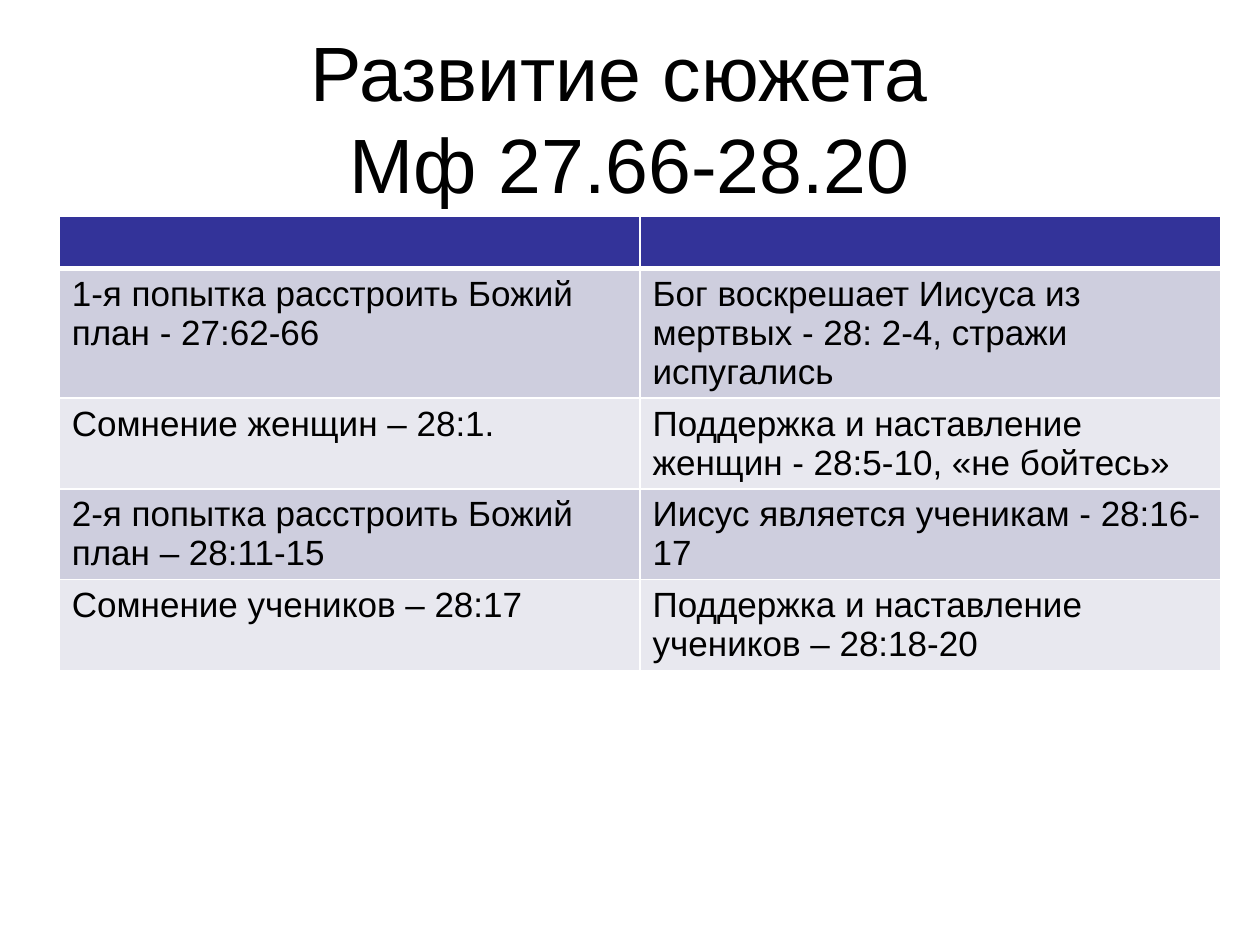
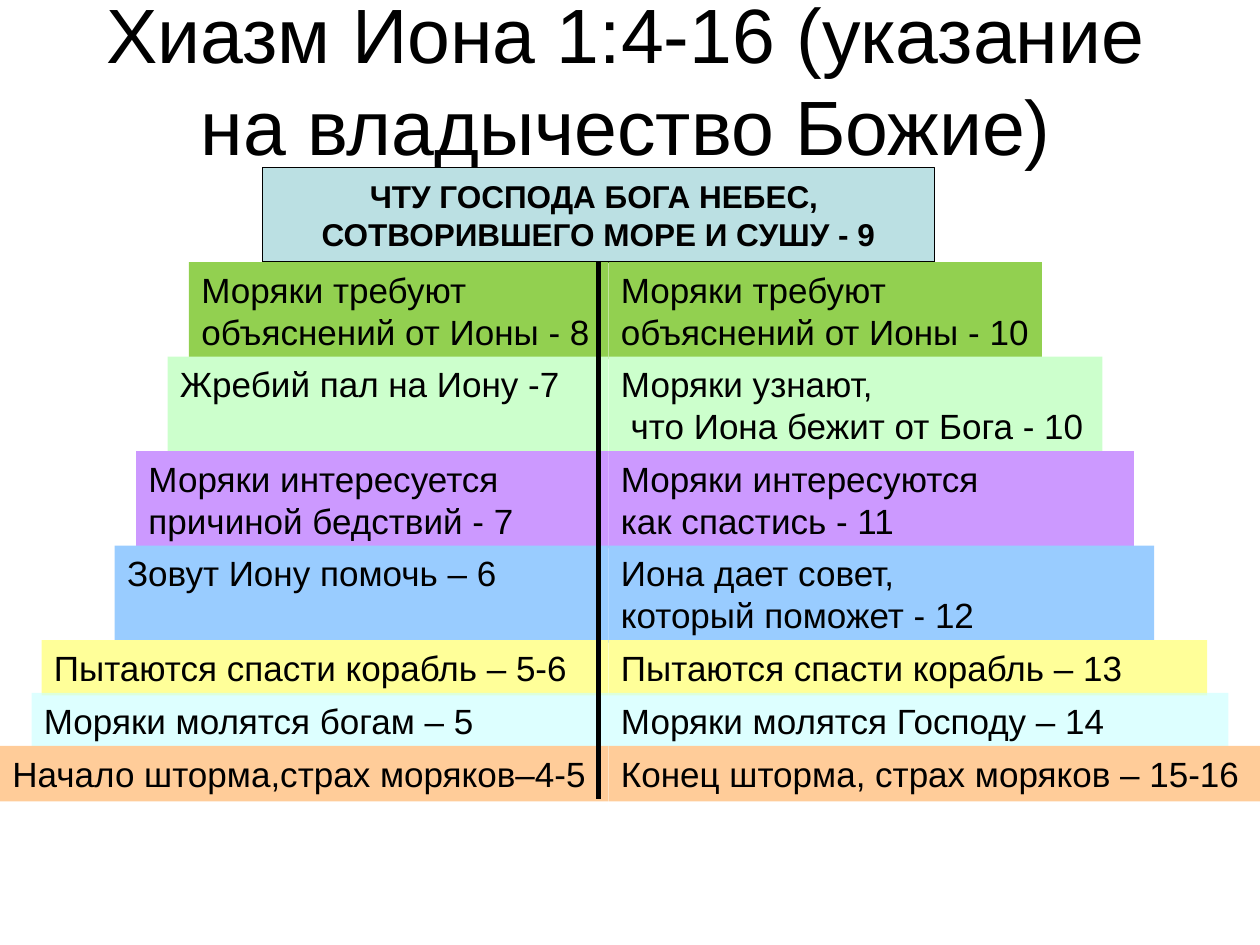
import pptx
import pptx.util
import pptx.dml.color
import pptx.enum.shapes
import pptx.enum.text
import pptx.oxml
import pptx.oxml.ns
from dataclasses import dataclass

Inches = pptx.util.Inches
Pt = pptx.util.Pt
ALIGN = pptx.enum.text.PP_ALIGN
ANCHOR = pptx.enum.text.MSO_ANCHOR


@dataclass(frozen=True)
class Theme:
    font: str = "Arial"
    ink: str = "000000"
    white: str = "FFFFFF"
    header: str = "333399"
    stripes: tuple = ("CECEDE", "E8E8EF")
    banner: str = "BBE0E3"
    title_size: int = 44
    body_size: int = 20
    banner_size: int = 18


THEME = Theme()

# Left and right cell text with the row height
PLOT_ROWS = [
    ("", "", 0.41),
    ("1-я попытка расстроить Божий план - 27:62-66",
     "Бог воскрешает Иисуса из мертвых - 28: 2-4, стражи испугались", 1.03),
    ("Сомнение женщин – 28:1.",
     "Поддержка и наставление женщин - 28:5-10, «не бойтесь»", 0.72),
    ("2-я попытка расстроить Божий план – 28:11-15",
     "Иисус является ученикам - 28:16-17", 0.72),
    ("Сомнение учеников – 28:17",
     "Поддержка и наставление учеников – 28:18-20", 0.72),
]

# Colour, opacity in percent, left width, right width, lines, left text, right text
CHIASM_STEPS = [
    ("92D050", 100, 3.33, 3.44, 2, "Моряки требуют\nобъяснений от Ионы - 8",
     "Моряки требуют\nобъяснений от Ионы - 10"),
    ("CCFFCC", 100, 3.5, 3.92, 2, "Жребий пал на Иону -7",
     "Моряки узнают,\n что Иона бежит от Бога - 10"),
    ("CC99FF", 100, 3.75, 4.17, 2, "Моряки интересуется\nпричиной бедствий - 7",
     "Моряки интересуются\nкак спастись - 11"),
    ("99CCFF", 100, 3.92, 4.33, 2, "Зовут Иону помочь – 6",
     "Иона дает совет,\nкоторый поможет - 12"),
    ("FFFF99", 100, 4.5, 4.75, 1, "Пытаются спасти корабль – 5-6",
     "Пытаются спасти корабль – 13"),
    ("CCFFFF", 66, 4.58, 4.92, 1, "Моряки молятся богам – 5",
     "Моряки молятся Господу – 14"),
    ("FFCC99", 100, 4.83, 5.25, 1, "Начало шторма,страх моряков–4-5",
     "Конец шторма, страх моряков – 15-16"),
]
STEP_PITCH = {1: 0.42, 2: 0.75}
STEP_OVERLAP = 0.02


def rgb(code):
    return pptx.dml.color.RGBColor.from_string(code)


def write_text(frame, text, size, align=ALIGN.LEFT, bold=False):
    frame.text = text
    for para in frame.paragraphs:
        para.alignment = align
        para.font.name = THEME.font
        para.font.size = Pt(size)
        para.font.bold = bold
        para.font.color.rgb = rgb(THEME.ink)


def add_titled_page(deck, title, left, top):
    page = deck.slides.add_slide(deck.slide_layouts[5])
    box = page.shapes.title
    box.left, box.top = Inches(left), Inches(top)
    box.width, box.height = Inches(9), Inches(1.25)
    frame = box.text_frame
    write_text(frame, title, THEME.title_size, ALIGN.CENTER)
    frame.auto_size = pptx.enum.text.MSO_AUTO_SIZE.NONE
    frame.vertical_anchor = ANCHOR.MIDDLE
    return page


def add_rectangle(page, left, top, width, height, color, text, size,
                  align=ALIGN.LEFT, anchor=ANCHOR.TOP, bold=False):
    box = page.shapes.add_shape(pptx.enum.shapes.MSO_SHAPE.RECTANGLE, Inches(left),
                                Inches(top), Inches(width), Inches(height))
    box.shadow.inherit = False
    box.fill.solid()
    box.fill.fore_color.rgb = rgb(color)
    box.line.fill.background()
    box.text_frame.vertical_anchor = anchor
    write_text(box.text_frame, text, size, align, bold)
    return box


def set_opacity(box, percent):
    color = box.fill._xPr.find(".//" + pptx.oxml.ns.qn("a:srgbClr"))
    alpha = pptx.oxml.parse_xml(
        f'<a:alpha {pptx.oxml.ns.nsdecls("a")} val="{percent * 1000}"/>')
    color.append(alpha)


def set_borders(cell, top, bottom):
    """Draw white cell borders; top and bottom are widths in points."""
    for side, width in (("L", 1), ("R", 1), ("T", top), ("B", bottom)):
        cell._tc.get_or_add_tcPr().append(pptx.oxml.parse_xml(
            f'<a:ln{side} {pptx.oxml.ns.nsdecls("a")} w="{Pt(width)}"><a:solidFill>'
            f'<a:srgbClr val="{THEME.white}"/></a:solidFill></a:ln{side}>'))


def add_plot_table(page, left, top, width):
    height = sum(row[-1] for row in PLOT_ROWS)
    table = page.shapes.add_table(len(PLOT_ROWS), 2, Inches(left), Inches(top),
                                  Inches(width), Inches(height)).table
    for index, (threat, answer, row_height) in enumerate(PLOT_ROWS):
        table.rows[index].height = Inches(row_height)
        color = THEME.stripes[(index - 1) % 2] if index else THEME.header
        for cell, text in zip(table.rows[index].cells, (threat, answer)):
            set_borders(cell, top=3 if index == 1 else 1, bottom=1 if index else 3)
            cell.fill.solid()
            cell.fill.fore_color.rgb = rgb(color)
            write_text(cell.text_frame, text, THEME.body_size)


def add_chiasm(page, axis, top):
    """Stack mirrored steps on both sides of the axis, under a banner."""
    # Banner at the summit
    banner_width, banner_height = 5.33, 0.75
    banner_left = axis - 0.08 - banner_width / 2
    banner = add_rectangle(
        page, banner_left, top, banner_width, banner_height, THEME.banner,
        "ЧТУ ГОСПОДА БОГА НЕБЕС, \nСОТВОРИВШЕГО МОРЕ И СУШУ - 9",
        THEME.banner_size, ALIGN.CENTER, ANCHOR.MIDDLE, bold=True)
    banner.line.color.rgb = rgb(THEME.ink)
    banner.line.width = Pt(0.75)

    # Paired steps
    step_top = top + banner_height
    for color, opacity, left_width, right_width, lines, left_text, right_text in CHIASM_STEPS:
        height = STEP_PITCH[lines] + STEP_OVERLAP
        for left, width, text in ((axis - left_width, left_width, left_text),
                                  (axis, right_width, right_text)):
            box = add_rectangle(page, left, step_top, width, height, color, text,
                                THEME.body_size)
            if opacity < 100:
                set_opacity(box, opacity)
        step_top += STEP_PITCH[lines]

    # Dividing line from the banner to the base
    middle = banner.left + banner.width // 2
    divider = page.shapes.add_connector(
        pptx.enum.shapes.MSO_CONNECTOR.STRAIGHT, middle, banner.top + banner.height,
        middle, Inches(step_top))
    divider.begin_connect(banner, 2)
    divider.line.color.rgb = rgb(THEME.ink)
    divider.line.width = Pt(3)
    divider._element.spPr.append(pptx.oxml.parse_xml(
        f'<a:effectLst {pptx.oxml.ns.nsdecls("a")}/>'))


def main():
    deck = pptx.Presentation()
    deck.slide_width, deck.slide_height = Inches(10), Inches(7.5)

    plot_page = add_titled_page(deck, "Развитие сюжета \vМф 27.66-28.20", 0.5, 0.3)
    add_plot_table(plot_page, left=0.47, top=1.72, width=9.22)

    chiasm_page = add_titled_page(
        deck, "Хиазм Иона 1:4-16 (указание на владычество Божие)", 0.47, 0)
    add_chiasm(chiasm_page, axis=4.83, top=1.33)

    deck.save("out.pptx")


if __name__ == "__main__":
    main()
